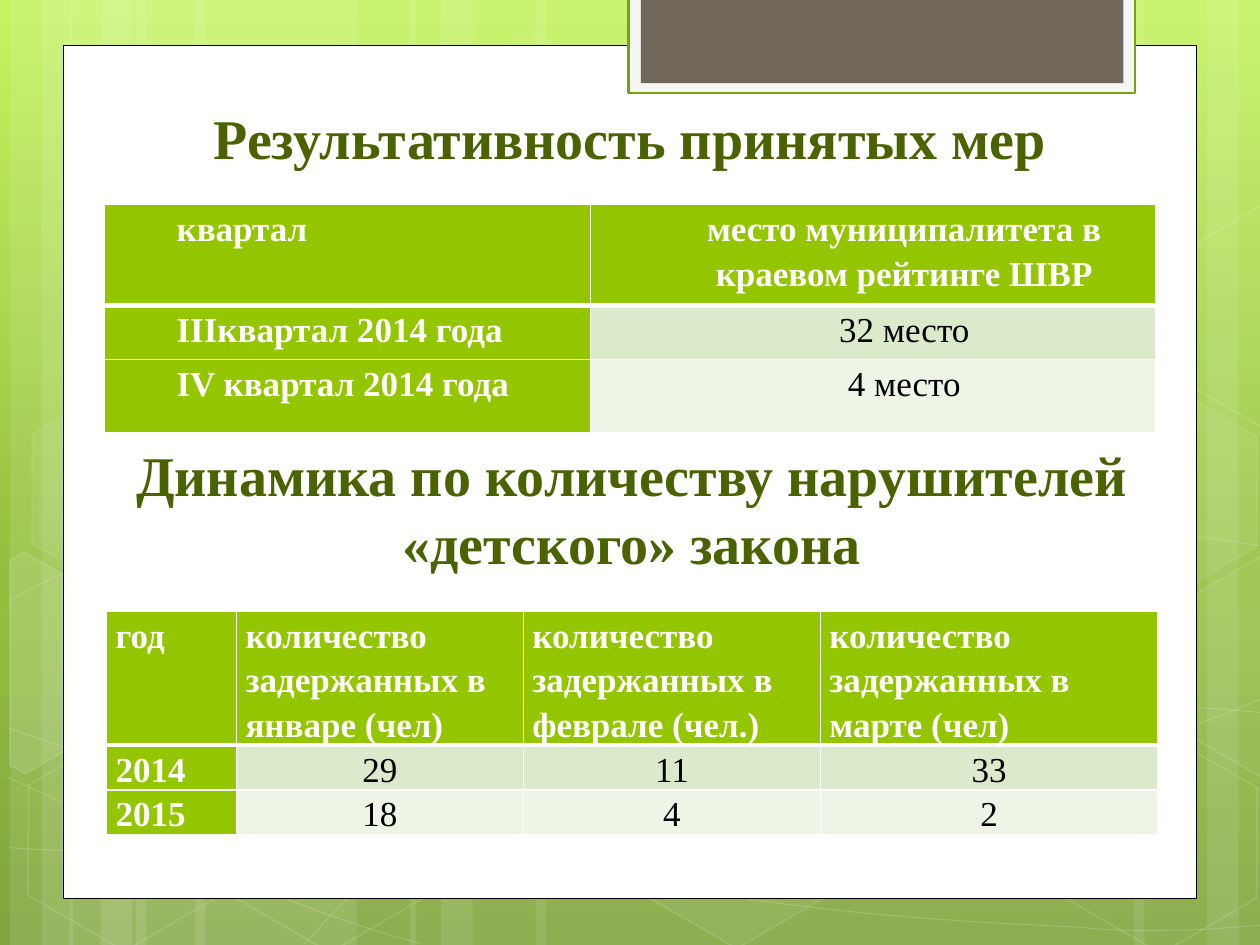
from copy import deepcopy
from math import cos, radians, sin

from lxml.etree import SubElement
from pptx import Presentation
from pptx.dml.color import RGBColor
from pptx.enum.shapes import MSO_SHAPE
from pptx.enum.text import MSO_ANCHOR, MSO_AUTO_SIZE, PP_ALIGN
from pptx.oxml.ns import qn
from pptx.util import Cm, Pt

FONT = "Times New Roman"
TILT = 30
HEX = {
    "white": "FFFFFF", "black": "000000", "head": "4A6300", "green": "94C600",
    "odd": "DCEACC", "even": "EEF5E7", "frame": "F5F5F5", "edge": "74A510",
    "tab": "71685A", "light": "C3F35F", "mid": "93BF3F", "dark": "81A53E",
}
BANDS = [(2.74, 4.45), (0.2, 1.27), (0.84, 2.11), (3.94, 4.45), (1.4, 1.27),
         (2.03, 2.11), (18.62, 4.45), (24.33, 1.27), (22.86, 2.11),
         (10.8, 7.82), (8.26, 1.27), (8.89, 2.11)]
# Each curve: a start point, then three Bezier points per segment.
CURVES = [
    [(0.18, 17.09), (1.55, 17.17), (2.92, 17.25), (4.83, 17.22),
     (6.73, 17.2), (9.09, 17.15), (11.63, 16.89),
     (14.17, 16.64), (17.78, 16.15), (20.12, 15.67),
     (22.43, 15.19), (24.82, 14.43), (25.58, 14)],
    [(0.18, 12.12), (0.91, 11.71), (1.65, 11.33), (3.07, 10.95),
     (4.52, 10.57), (6.58, 10.01), (8.81, 9.83),
     (11.07, 9.65), (13.82, 9.63), (16.61, 9.83),
     (19.41, 10.03), (24.05, 10.82), (25.58, 11.02)],
    [(0.15, 15.67), (3.23, 17.07), (6.27, 18.47), (8.48, 19.02)],
    [(0.18, 14.68), (0.97, 14.96), (1.78, 15.24), (3.25, 15.65),
     (4.72, 16.03), (6.93, 16.66), (9.07, 17.09),
     (11.18, 17.53), (13.84, 17.98), (15.95, 18.24),
     (18.06, 18.52), (20.32, 18.62), (21.67, 18.69),
     (22.99, 18.8), (23.34, 18.75), (24, 18.75),
     (24.66, 18.72), (25.12, 18.67), (25.58, 18.64)],
    [(6.15, 19.02), (6.6, 18.52), (7.06, 18.01), (7.67, 17.55),
     (8.28, 17.09), (9.14, 16.59), (9.86, 16.23),
     (10.57, 15.88), (11, 15.72), (11.94, 15.47),
     (12.88, 15.21), (14.55, 14.86), (15.44, 14.68),
     (16.36, 14.5), (16.48, 14.5), (17.27, 14.45),
     (18.06, 14.38), (19.3, 14.3), (20.17, 14.27),
     (21.06, 14.25), (22.5, 14.27), (22.5, 14.27),
     (23.07, 14.27), (23.64, 14.27), (24.21, 14.27),
     (24.66, 14.3), (25.1, 14.33), (25.55, 14.38)],
]
# left, top, fill opacity, line opacity
HEXAGONS = [(8.48, 0.91, 4, 8), (12.62, 14.96, 6, 12), (0.28, 15.01, 0, 12),
            (0.36, 7.92, 7, 8), (4.42, 15.04, 0, 12), (19.13, 11.51, 10, 12),
            (21.18, 15.06, 0, 12), (21.18, 7.98, 7, 8)]
LEFT_CUT = [(0.2, 11.3), (0.48, 11.13), (2.44, 12.24),
            (2.41, 14.48), (0.51, 15.6), (0.2, 15.42)]
RIGHT_CUT = [(23.52, 12.32), (25.43, 11.2), (25.63, 11.33),
             (25.63, 15.57), (25.45, 15.67), (23.52, 14.55)]
RATING = [["квартал", "место муниципалитета в краевом рейтинге ШВР"],
          ["IIIквартал 2014 года", "32 место"],
          ["IV квартал 2014 года", "4 место"]]
COUNTS = [["год", "количество задержанных в январе (чел)",
           "количество задержанных в феврале (чел.)",
           "количество задержанных в марте (чел)"],
          ["2014", "29", "11", "33"],
          ["2015", "18", "4", "2"]]


def rgb(name):
    return RGBColor.from_string(HEX[name])


def fade(node, alpha):
    """Set the opacity, in percent, of the first colour under node."""
    tone = next(node.iter(qn("a:srgbClr")))
    SubElement(tone, qn("a:alpha"), val=str(alpha * 1000))


def paint(shape, fill=None, line=None, width=0.5, veil=0, haze=0):
    """Style a shape; veil and haze are fill and line opacity."""
    shape.shadow.inherit = False
    if fill:
        shape.fill.solid()
        shape.fill.fore_color.rgb = rgb(fill)
        if veil:
            fade(shape.element.spPr.find(qn("a:solidFill")), veil)
    else:
        shape.fill.background()
    if line:
        shape.line.color.rgb = rgb(line)
        shape.line.width = Pt(width)
        if haze:
            fade(shape.element.spPr.find(qn("a:ln")), haze)
    else:
        shape.line.fill.background()


def block(slide, kind, box, **style):
    shape = slide.shapes.add_shape(kind, *map(Cm, box))
    paint(shape, **style)
    return shape


def outline(slide, points, close, **style):
    first, *rest = [(Cm(x), Cm(y)) for x, y in points]
    pen = slide.shapes.build_freeform(*first)
    pen.add_line_segments(rest, close=close)
    shape = pen.convert_to_shape()
    paint(shape, **style)
    return shape


def curve(slide, nodes):
    """Draw an outline, then turn each three line steps into one Bezier."""
    shape = outline(slide, nodes, False, line="white", haze=20)
    steps = list(shape.element.iter(qn("a:lnTo")))
    for i in range(0, len(steps), 3):
        trio = steps[i:i + 3]
        bend = SubElement(trio[0].getparent(), qn("a:cubicBezTo"))
        for step in trio:
            bend.append(step[0])
            step.getparent().remove(step)


def cut(slide, points, mid, veil):
    """Draw a tilted hexagon trimmed by the slide's edge."""
    c, s = cos(radians(TILT)), sin(radians(TILT))
    flat = []
    for x, y in points:
        dx, dy = x - mid[0], y - mid[1]
        flat.append((mid[0] + dx * c + dy * s, mid[1] - dx * s + dy * c))
    shape = outline(slide, flat, True, fill="white" if veil else None, veil=veil,
                    line="white", width=1, haze=12)
    shape.rotation = TILT


def backdrop(slide):
    fill = slide.background.fill
    fill.gradient()
    fill.gradient_angle = 270
    stops = slide.element.find(".//" + qn("a:gsLst"))
    stops.append(deepcopy(stops[-1]))
    for stop, place, name in zip(fill.gradient_stops, (0, 0.62, 1),
                                 ("light", "mid", "dark")):
        stop.position = place
        stop.color.rgb = rgb(name)
    for left, width in BANDS:
        block(slide, MSO_SHAPE.RECTANGLE, (left, 0, width, 19.05),
              fill="white", veil=10)
    for nodes in CURVES:
        curve(slide, nodes)
    for left, top, veil, haze in HEXAGONS:
        shape = block(slide, MSO_SHAPE.HEXAGON, (left, top, 4.45, 3.86),
                      fill="white" if veil else None, veil=veil,
                      line="white", width=1, haze=haze)
        shape.adjustments[0] = 0.285
        shape.rotation = TILT
    cut(slide, LEFT_CUT, (0.91, 13.59), 10)
    cut(slide, RIGHT_CUT, (25.02, 13.21), 4)
    cut(slide, [(x, y - 7.06) for x, y in RIGHT_CUT], (25.02, 6.15), 0)


def write(frame, text, size, tone, bold, align, space):
    frame.text = text
    para = frame.paragraphs[0]
    para.alignment = align
    para.line_spacing = space
    font = para.font
    font.name, font.size, font.bold = FONT, Pt(size), bold
    font.color.rgb = rgb(tone)
    return para


def heading(shape, box, text, base=0.13):
    shape.left, shape.top, shape.width, shape.height = map(Cm, box)
    frame = shape.text_frame
    frame.word_wrap = True
    frame.auto_size = MSO_AUTO_SIZE.NONE
    frame.vertical_anchor = MSO_ANCHOR.BOTTOM
    frame.margin_bottom = Cm(base)
    write(frame, text, 32, "head", True, PP_ALIGN.CENTER, 1.0)


def border(cell, row):
    props = cell._tc.get_or_add_tcPr()
    thick = {(0, "lnB"), (1, "lnT")}
    for side in ("lnL", "lnR", "lnT", "lnB"):
        width = Pt(3 if (row, side) in thick else 1)
        line = SubElement(props, qn("a:" + side), w=str(width))
        SubElement(SubElement(line, qn("a:solidFill")), qn("a:srgbClr"),
                   val=HEX["white"])


def grid(slide, spot, cols, rows, data, indent=0):
    box = map(Cm, (*spot, sum(cols), sum(rows)))
    table = slide.shapes.add_table(len(rows), len(cols), *box).table
    for col, width in zip(table.columns, cols):
        col.width = Cm(width)
    for r, (height, texts) in enumerate(zip(rows, data)):
        table.rows[r].height = Cm(height)
        for c, text in enumerate(texts):
            cell = table.cell(r, c)
            cell.margin_left = cell.margin_right = Cm(0.18)
            cell.margin_top = cell.margin_bottom = 0
            label = r == 0 or c == 0
            border(cell, r)
            cell.fill.solid()
            cell.fill.fore_color.rgb = rgb(
                "green" if label else "odd" if r % 2 else "even")
            middle = c > 0 and (r > 0 or indent > 0)
            para = write(cell.text_frame, text, 20, "white" if label else "black",
                         label, PP_ALIGN.CENTER if middle else PP_ALIGN.LEFT, 1.15)
            if indent:
                para._p.get_or_add_pPr().set("marL", str(Cm(indent)))


def main():
    deck = Presentation()
    deck.slide_width, deck.slide_height = Cm(25.4), Cm(19.05)
    slide = deck.slides.add_slide(deck.slide_layouts[5])
    backdrop(slide)
    rect = MSO_SHAPE.RECTANGLE
    block(slide, rect, (1.27, 0.91, 22.86, 17.2), fill="white", line="black")
    block(slide, rect, (12.67, -0.05, 10.21, 1.93), fill="frame", line="edge",
          width=1.25)
    block(slide, rect, (12.92, -0.05, 9.73, 1.73), fill="tab")

    title = slide.shapes.title
    title.element.getparent().append(title.element)  # bring to front
    heading(title, (1.7, 1.93, 22, 3), "Результативность принятых мер", 1.49)
    grid(slide, (2.11, 4.12), (9.79, 11.39), (2.04, 1.09, 1.47), RATING, 1.27)
    second = slide.shapes.add_textbox(0, 0, Cm(1), Cm(1))
    heading(second, (1.74, 9.42, 22, 2.31),
            "Динамика по количеству нарушителей «детского» закона")
    grid(slide, (2.15, 12.32), (2.62, 5.78, 5.99, 6.8), (2.7, 0.9, 0.9), COUNTS)
    deck.save("out.pptx")


if __name__ == "__main__":
    main()
